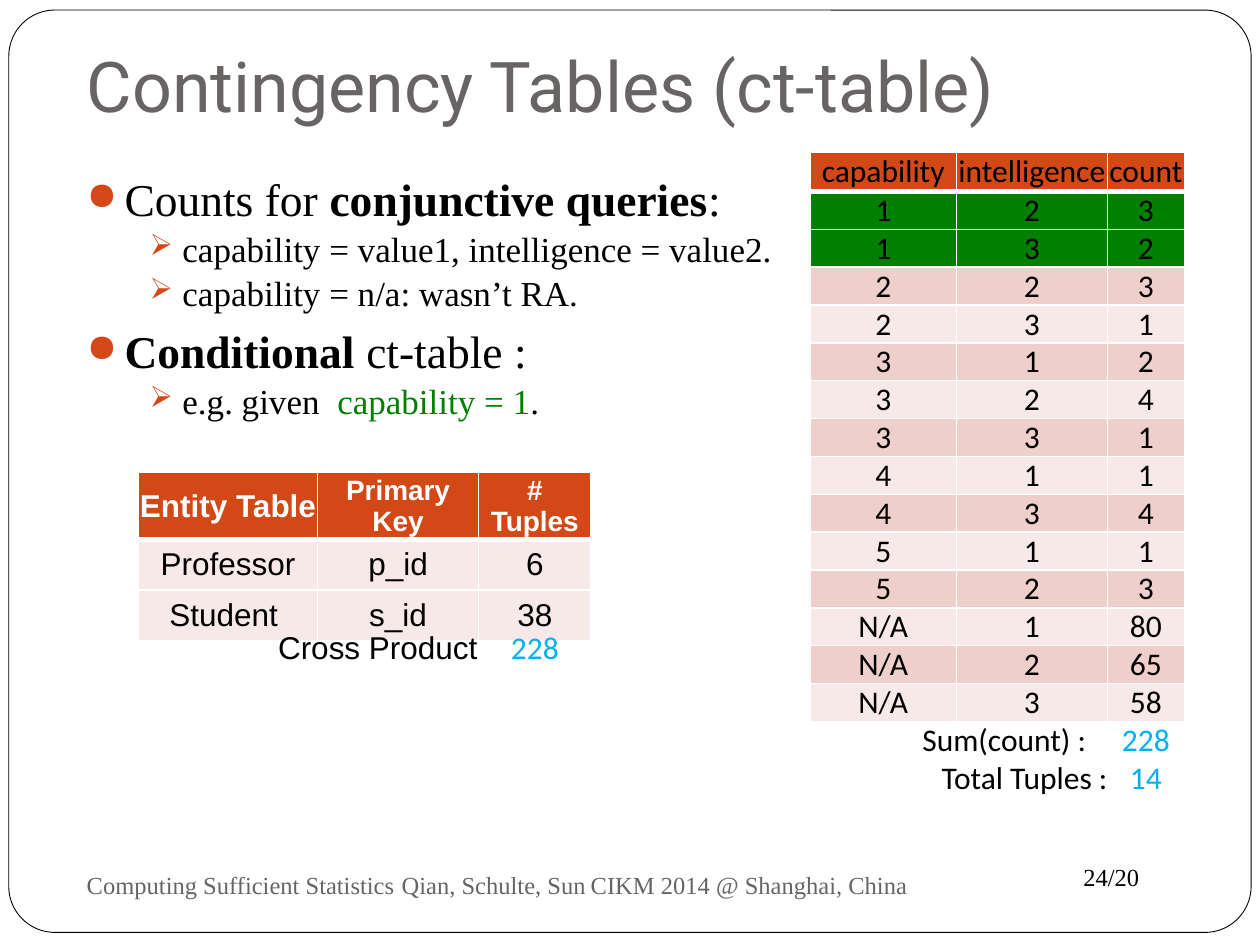
"""Builds a slide on contingency tables with counts and a cross product."""
import lxml.etree
import pptx
import pptx.dml.color
import pptx.enum.shapes
import pptx.enum.text
import pptx.oxml.ns
import pptx.util

RGBColor = pptx.dml.color.RGBColor
Align = pptx.enum.text.PP_ALIGN
Anchor = pptx.enum.text.MSO_ANCHOR

BLACK = RGBColor(0x00, 0x00, 0x00)
WHITE = RGBColor(0xFF, 0xFF, 0xFF)
GRAY = RGBColor(0x69, 0x64, 0x64)
ORANGE = RGBColor(0xD3, 0x48, 0x17)
GREEN = RGBColor(0x00, 0x80, 0x00)
BLUE = RGBColor(0x00, 0xB0, 0xF0)
ROSE = RGBColor(0xEF, 0xCF, 0xCC)
PALE = RGBColor(0xF7, 0xE9, 0xE8)

SERIF, SANS, BODY, HEAD = "Times New Roman", "Arial", "Calibri", "Roboto"
COLUMNS, ROWS = 100, 75

COUNTS = [
    (1, 2, 3), (1, 3, 2), (2, 2, 3), (2, 3, 1), (3, 1, 2), (3, 2, 4), (3, 3, 1),
    (4, 1, 1), (4, 3, 4), (5, 1, 1), (5, 2, 3),
    ("N/A", 1, 80), ("N/A", 2, 65), ("N/A", 3, 58),
]
ENTITIES = [("Professor", "p_id", 6), ("Student ", "s_id", 38)]
POINTS = [
    (0, [("Counts for ", {}), ("conjunctive queries", {"bold": True}), (":", {})]),
    (1, [("capability = value1, intelligence = value2.", {})]),
    (1, [("capability = n/a: wasn’t RA.", {})]),
    (0, [("Conditional ", {"bold": True}), ("ct-table :", {})]),
    (1, [("e.g. given  ", {}), ("capability = 1", {"color": GREEN}), (".", {})]),
]
LEVELS = [("●", 26, 0.3, -0.3, 5.8), ("➢", 20, 0.76, -0.26, 1)]


def add_node(parent, tag, **attributes):
    """Append a drawing element and return it."""
    return lxml.etree.SubElement(parent, pptx.oxml.ns.qn(tag), attributes)


class SlideBuilder:
    """Holds the style and the current page, placed on a 100 by 75 grid."""

    def __init__(self, deck):
        self.deck = deck
        self.page = deck.slides.add_slide(deck.slide_layouts[6])

    def across(self, columns):
        """Turn grid columns into a length."""
        return round(self.deck.slide_width * columns / COLUMNS)

    def down(self, rows):
        """Turn grid rows into a length."""
        return round(self.deck.slide_height * rows / ROWS)

    def area(self, left, top, width, height):
        """Turn a grid area into lengths."""
        return self.across(left), self.down(top), self.across(width), self.down(height)

    def span(self, para, text, size, font, color=BLACK, bold=False):
        """Add one styled run."""
        span = para.add_run()
        span.text = str(text)
        span.font.size = pptx.util.Pt(size)
        span.font.name = font
        span.font.bold = bold
        span.font.color.rgb = color

    def frame(self, *area):
        """Add the rounded page outline."""
        box = self.page.shapes.add_shape(
            pptx.enum.shapes.MSO_SHAPE.ROUNDED_RECTANGLE, *self.area(*area))
        box.adjustments[0] = 0.05
        box.shadow.inherit = False
        box.fill.solid()
        box.fill.fore_color.rgb = WHITE
        box.line.color.rgb = BLACK
        box.line.width = pptx.util.Pt(0.5)

    def text_box(self, area, anchor=Anchor.TOP):
        """Add a wrapping text box and return its text frame."""
        words = self.page.shapes.add_textbox(*self.area(*area)).text_frame
        words.word_wrap = True
        words.vertical_anchor = anchor
        return words

    def label(self, area, text, size, font, color, anchor=Anchor.TOP, bottom=0.5, tabs=()):
        """Add a single-paragraph text, with optional tab stops in columns."""
        words = self.text_box(area, anchor)
        words.margin_bottom = self.down(bottom)
        para = words.paragraphs[0]
        self.span(para, text, size, font, color)
        if tabs:
            stops = add_node(para._p.get_or_add_pPr(), "a:tabLst")
            for stop in tabs:
                add_node(stops, "a:tab", pos=str(self.across(stop)), algn="l")

    def bullets(self, area, points):
        """Add a two-level bullet list."""
        words = self.text_box(area)
        for number, (level, spans) in enumerate(points):
            para = words.add_paragraph() if number else words.paragraphs[0]
            mark, size, margin, indent, before = LEVELS[level]
            para.level = level
            para.space_before = pptx.util.Pt(before)
            style = para._p.get_or_add_pPr()
            style.set("marL", str(pptx.util.Inches(margin)))
            style.set("indent", str(pptx.util.Inches(indent)))
            add_node(add_node(style, "a:buClr"), "a:srgbClr", val=str(ORANGE))
            add_node(style, "a:buSzPct", val="85000")
            add_node(style, "a:buChar", char=mark)
            for text, look in spans:
                self.span(para, text, size, SERIF, **look)

    def table(self, left, top, widths, heights):
        """Add a plain table and return it."""
        area = self.area(left, top, sum(widths), sum(heights))
        table = self.page.shapes.add_table(len(heights), len(widths), *area).table
        table.first_row = table.horz_banding = False
        for column, width in zip(table.columns, widths):
            column.width = self.across(width)
        for row, height in zip(table.rows, heights):
            row.height = self.down(height)
        return table

    def cell(self, cell, text, size=18, font=BODY, color=BLACK, bold=False,
             fill=None, bottom=1, align=Align.CENTER, right=0.1):
        """Fill one cell; a cell without fill has no borders."""
        cell.margin_left, cell.margin_right = self.across(0.1), self.across(right)
        cell.margin_top = cell.margin_bottom = 0
        cell.vertical_anchor = Anchor.MIDDLE
        style = cell._tc.get_or_add_tcPr()
        for side in "LRTB":
            weight = pptx.util.Pt(bottom if side == "B" else 1)
            line = add_node(style, f"a:ln{side}", w=str(weight))
            if fill is None:
                add_node(line, "a:noFill")
            else:
                add_node(add_node(line, "a:solidFill"), "a:srgbClr", val=str(WHITE))
        if fill is None:
            cell.fill.background()
        else:
            cell.fill.solid()
            cell.fill.fore_color.rgb = fill
        para = cell.text_frame.paragraphs[0]
        para.alignment = align
        self.span(para, text, size, font, color, bold)

    def count_table(self, left, top):
        """Add the contingency table with its totals."""
        totals = [("Sum(count) :", len(COUNTS) and sum(row[2] for row in COUNTS), 1.7),
                  ("Total Tuples :", len(COUNTS), 0)]
        heights = [3.1] + [3] * (len(COUNTS) + len(totals))
        table = self.table(left, top, [11.6, 12, 6.1], heights)
        for column, title in enumerate(["capability", "intelligence", "count"]):
            self.cell(table.cell(0, column), title, fill=ORANGE, bottom=3)
        for row, values in enumerate(COUNTS, 1):
            fill = GREEN if values[0] == 1 else ROSE if row % 2 else PALE
            for column, value in enumerate(values):
                self.cell(table.cell(row, column), value, fill=fill)
        for row, (title, total, gap) in enumerate(totals, len(COUNTS) + 1):
            table.cell(row, 0).merge(table.cell(row, 1))
            self.cell(table.cell(row, 0), title, align=Align.RIGHT, right=gap)
            self.cell(table.cell(row, 2), total, color=BLUE)

    def entity_tables(self, left, top):
        """Add the entity table and the cross product beneath it."""
        table = self.table(left, top, [14.2, 12.8, 8.9], [4] * 3)
        for column, (title, size) in enumerate(
                [("Entity Table", 18), ("Primary Key", 16), ("# Tuples", 16)]):
            self.cell(table.cell(0, column), title, size, SANS, WHITE, True, ORANGE, 3)
        for row, values in enumerate(ENTITIES, 1):
            for column, value in enumerate(values):
                self.cell(table.cell(row, column), value, font=SANS, fill=PALE)
        product = self.table(left, top + 12, [27, 8.9], [4])
        self.cell(product.cell(0, 0), "Cross Product", font=SANS, align=Align.RIGHT)
        self.cell(product.cell(0, 1), ENTITIES[0][2] * ENTITIES[1][2], color=BLUE)


def main():
    """Build and save the deck."""
    deck = pptx.Presentation()
    deck.slide_width, deck.slide_height = pptx.util.Inches(10), pptx.util.Inches(7.5)
    slide = SlideBuilder(deck)
    slide.frame(0.7, 0.8, 98.6, 73.2)
    slide.label((85, 67.9, 10, 3.4), "24/20", 14, SERIF, BLACK)
    slide.label((5.9, 3.8, 82.2, 7.2), "Contingency Tables (ct-table)", 40, HEAD, GRAY,
                Anchor.BOTTOM, bottom=1)
    slide.label((5.9, 67.7, 67.3, 5),
                "Computing Sufficient Statistics\tQian, Schulte, Sun\tCIKM 2014 @ Shanghai, China",
                14, SERIF, GRAY, Anchor.MIDDLE, tabs=(25, 40))
    slide.count_table(64.3, 12.1)
    slide.bullets((5.9, 13.1, 60.4, 20.7), POINTS)
    slide.entity_tables(11, 37.5)
    deck.save("out.pptx")


if __name__ == "__main__":
    main()
